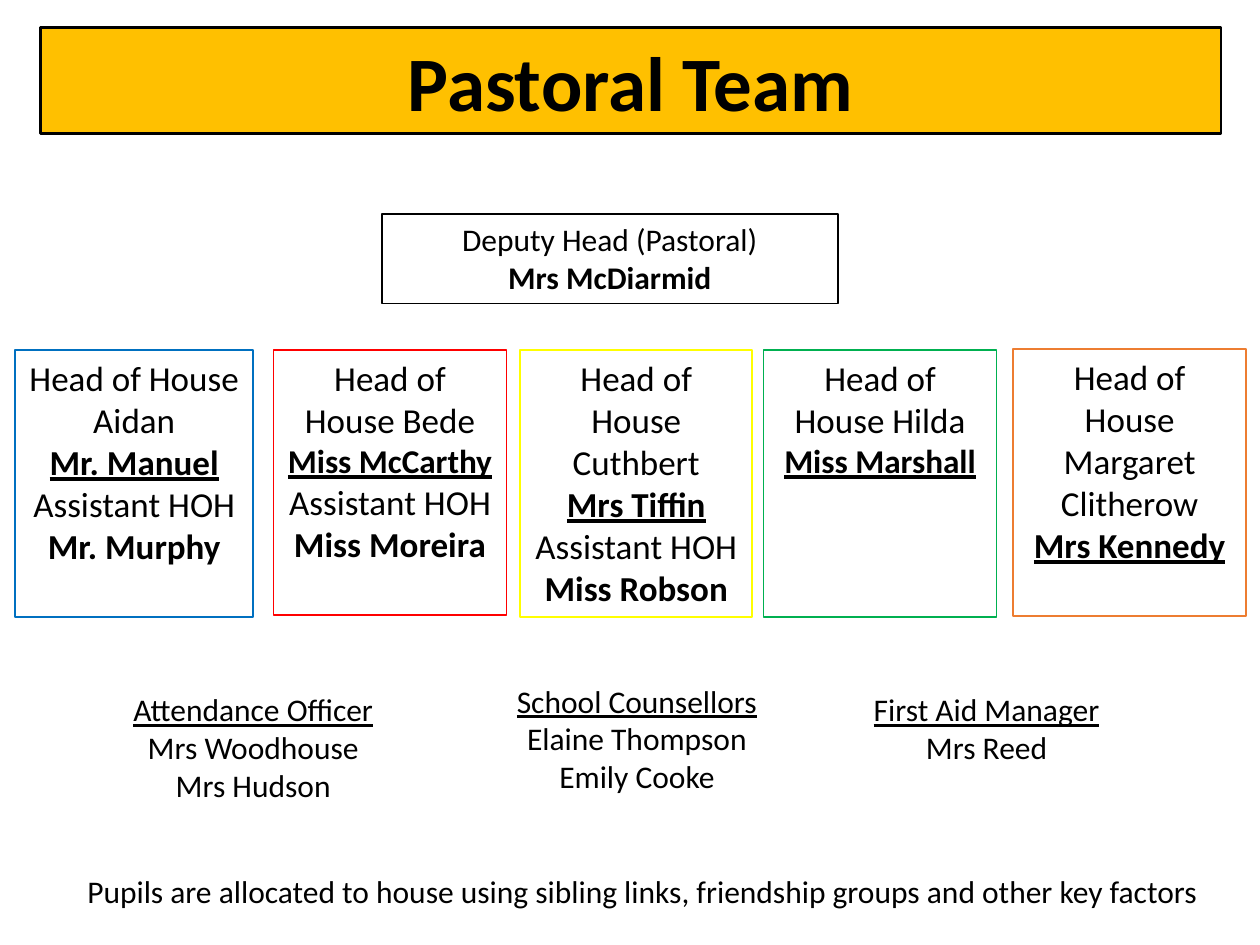
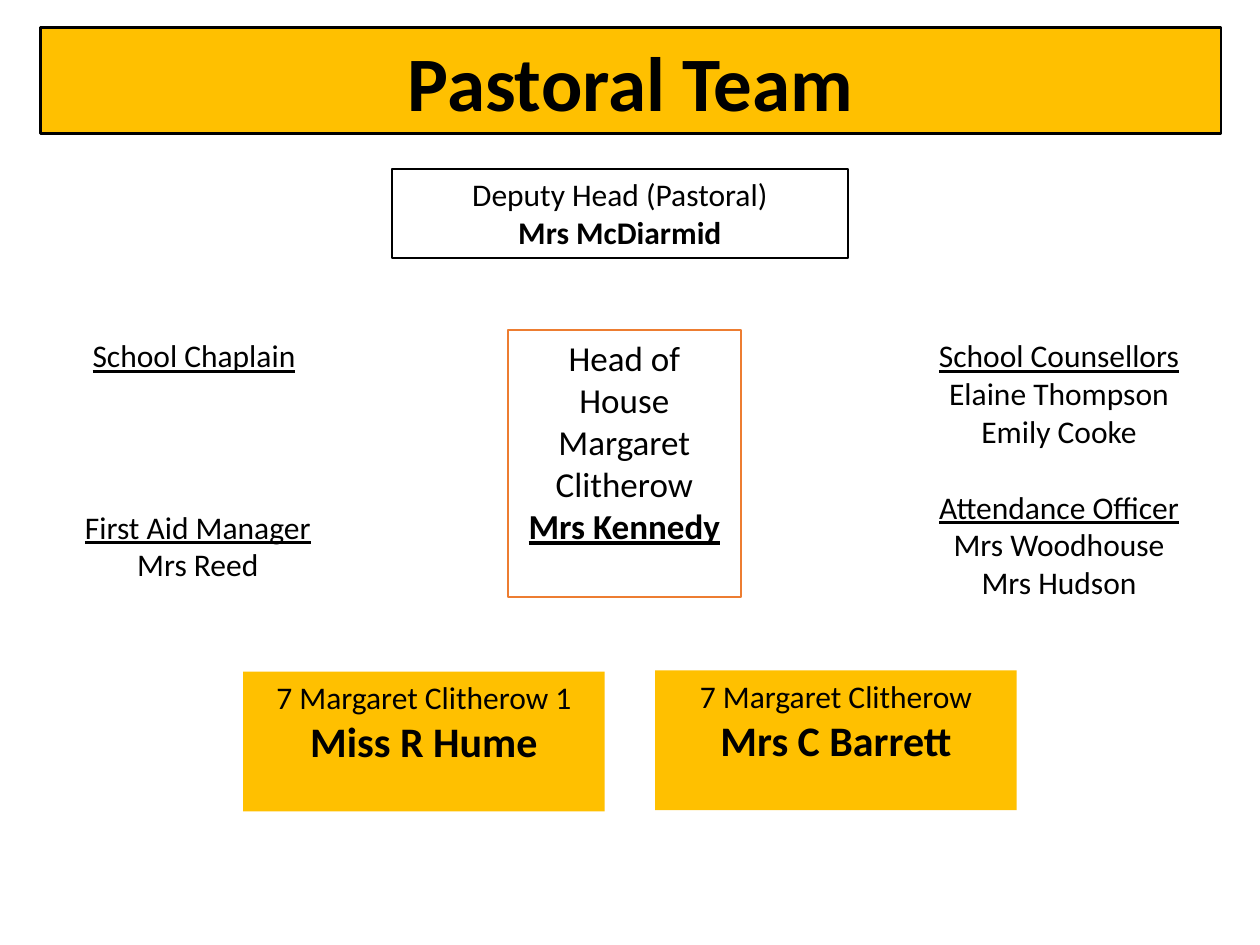
from pptx import Presentation
from pptx.dml.color import RGBColor
from pptx.enum.shapes import MSO_SHAPE
from pptx.enum.text import MSO_ANCHOR, MSO_AUTO_SIZE, PP_ALIGN
from pptx.util import Emu, Pt

EMU_PER_PX = 9144  # 100 px to the inch
TITLE_ONLY = 5
FONT = "Calibri"
COLOURS = {
    "text": "000000",
    "band": "FFC000",
    "aidan": "0070C0",
    "bede": "FF0000",
    "cuthbert": "FFFF00",
    "hilda": "00B050",
    "margaret": "ED7D31",
}

# A line of text is (text, marks) or (text, marks, size); marks are "b" and "u".
DEPUTY = [("Deputy Head (Pastoral)", ""), ("Mrs McDiarmid", "b")]
MARGARET = [("Head of House Margaret Clitherow", ""), ("Mrs Kennedy", "bu")]
ASSISTANT = ("Assistant HOH", "")
HOUSES = [
    ("aidan", (12, 278, 189, 212),
     [("Head of House Aidan", ""), ("Mr. Manuel", "bu"), ASSISTANT, ("Mr. Murphy", "b")]),
    ("bede", (217, 278, 185, 210),
     [("Head of House Bede", ""), ("Miss McCarthy", "bu", 19), ASSISTANT, ("Miss Moreira", "b")]),
    ("cuthbert", (413, 278, 184, 212),
     [("Head of House Cuthbert", ""), ("Mrs Tiffin", "bu"), ASSISTANT, ("Miss Robson", "b")]),
    ("hilda", (606, 278, 185, 212),
     [("Head of House Hilda", ""), ("Miss Marshall", "bu", 19)]),
    ("margaret", (804, 277, 185, 212), MARGARET),
]
CHAPLAIN = [("School Chaplain", "u")]
COUNSELLORS = [("School Counsellors", "u"), ("Elaine Thompson", ""), ("Emily Cooke", "")]
ATTENDANCE = [("Attendance Officer", "u"), ("Mrs Woodhouse", ""), ("Mrs Hudson", "")]
FIRST_AID = [("First Aid Manager", "u"), ("Mrs Reed", "")]
ALLOCATION = [("Pupils are allocated to house using sibling links, "
               "friendship groups and other key factors", "")]
FORMS = [
    ((193, 533, 287, 111), "7 Margaret Clitherow 1", "Miss R Hume"),
    ((520, 532, 287, 111), "7 Margaret Clitherow", "Mrs C Barrett"),
]


def emu(box):
    return [Emu(length * EMU_PER_PX) for length in box]


def colour(name):
    return RGBColor.from_string(COLOURS[name])


class TeamDeck:
    def __init__(self):
        self.presentation = Presentation()
        self.presentation.slide_width, self.presentation.slide_height = emu((1000, 750))
        self.slide = None

    def add_slide(self, title):
        layout = self.presentation.slide_layouts[TITLE_ONLY]
        self.slide = self.presentation.slides.add_slide(layout)
        band = self.slide.shapes.title
        band.left, band.top, band.width, band.height = emu((32, 22, 937, 84))
        self.paint(band, "band", "text", 1.5)
        self.set_lines(band, [(title, "b")], 44)

    def paint(self, shape, fill=None, line=None, line_width=1):
        if fill:
            shape.fill.solid()
            shape.fill.fore_color.rgb = colour(fill)
        else:
            shape.fill.background()
        if line:
            shape.line.color.rgb = colour(line)
            shape.line.width = Pt(line_width)
        else:
            shape.line.fill.background()

    def set_lines(self, shape, lines, size):
        frame = shape.text_frame
        frame.text = "\n".join(line[0] for line in lines)
        frame.word_wrap = True
        frame.auto_size = MSO_AUTO_SIZE.NONE
        frame.vertical_anchor = MSO_ANCHOR.TOP
        for paragraph, (_, marks, *own_size) in zip(frame.paragraphs, lines):
            paragraph.alignment = PP_ALIGN.CENTER
            for run in paragraph.runs:
                run.font.name = FONT
                run.font.size = Pt(own_size[0] if own_size else size)
                run.font.bold = "b" in marks
                run.font.underline = "u" in marks
                run.font.color.rgb = colour("text")

    def add_box(self, box, lines, size=18, fill=None, line=None):
        shape = self.slide.shapes.add_shape(MSO_SHAPE.RECTANGLE, *emu(box))
        shape.shadow.inherit = False
        self.paint(shape, fill, line)
        self.set_lines(shape, lines, size)

    def add_text(self, box, lines):
        self.set_lines(self.slide.shapes.add_textbox(*emu(box)), lines, 18)

    def add_deputy(self, left, top):
        self.add_box((left, top, 362, 71), DEPUTY, line="text")

    def add_house(self, name, box, lines):
        self.add_box(box, lines, 20, line=name)


def build_houses_slide(deck):
    deck.add_slide("Pastoral Team")
    deck.add_deputy(303, 170)
    for name, box, lines in HOUSES:
        deck.add_house(name, box, lines)
    deck.add_text((36, 543, 330, 101), ATTENDANCE)
    deck.add_text((393, 536, 225, 101), COUNSELLORS)
    deck.add_text((669, 543, 228, 71), FIRST_AID)
    deck.add_text((54, 687, 912, 40), ALLOCATION)


def build_margaret_slide(deck):
    deck.add_slide("Pastoral Team")
    deck.add_deputy(311, 134)
    deck.add_house("margaret", (403, 262, 185, 212), MARGARET)
    deck.add_text((40, 262, 228, 40), CHAPLAIN)
    deck.add_text((43, 398, 228, 71), FIRST_AID)
    deck.add_text((728, 262, 225, 101), COUNSELLORS)
    deck.add_text((728, 382, 225, 101), ATTENDANCE)
    for box, form, tutor in FORMS:
        deck.add_box(box, [(form, ""), (tutor, "b", 24)], fill="band")


def main():
    deck = TeamDeck()
    build_houses_slide(deck)
    build_margaret_slide(deck)
    deck.presentation.save("out.pptx")


if __name__ == "__main__":
    main()
